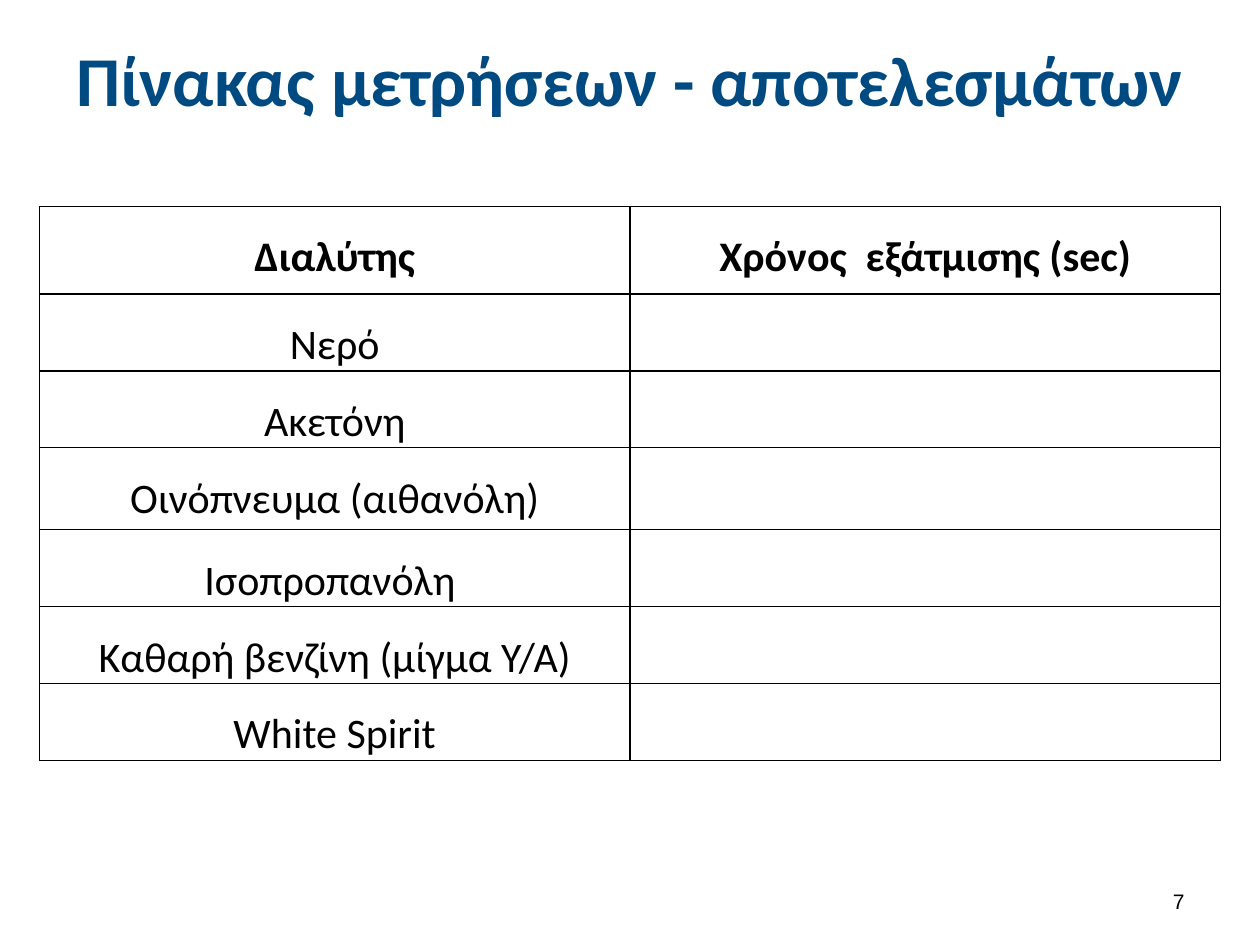
from lxml.etree import SubElement
from pptx import Presentation
from pptx.dml.color import RGBColor
from pptx.enum.text import MSO_ANCHOR, PP_ALIGN
from pptx.oxml.ns import qn
from pptx.util import Pt

# Content
TITLE = "Πίνακας μετρήσεων - αποτελεσμάτων"
PAGE_NUMBER = "7"
HEADINGS = ["Διαλύτης", "Χρόνος  εξάτμισης (sec)"]
SOLVENTS = [
    "Νερό",
    "Ακετόνη",
    "Οινόπνευμα (αιθανόλη)",
    "Ισοπροπανόλη ",
    "Καθαρή βενζίνη (μίγμα Υ/Α)",
    "White Spirit",
]
ROWS = [HEADINGS] + [[solvent, ""] for solvent in SOLVENTS]

# Measures in points
TABLE_LEFT, TABLE_TOP, COLUMN_WIDTH = 22.5, 118, 337.5
ROW_HEIGHTS = [50, 43.2, 43.2, 46.8, 43.2, 43.2, 43.2]

BLUE, BLACK = "004A82", "000000"


def color(value):
    return RGBColor.from_string(value)


def write(para, text, size, font, ink, align, bold=False):
    para.text = text
    para.alignment = align
    para.font.size = Pt(size)
    for span in para.runs:
        span.font.size = Pt(size)
        span.font.name = font
        span.font.bold = bold
        span.font.color.rgb = color(ink)


def add_borders(cell, ink, width):
    properties = cell._tc.get_or_add_tcPr()
    for position, side in enumerate(("a:lnL", "a:lnR", "a:lnT", "a:lnB")):
        line = SubElement(properties, qn(side), w=str(Pt(width)))
        fill = SubElement(line, qn("a:solidFill"))
        SubElement(fill, qn("a:srgbClr"), val=ink)
        properties.insert(position, line)


def place(box, left, top, width, height):
    box.left, box.top = Pt(left), Pt(top)
    box.width, box.height = Pt(width), Pt(height)


deck = Presentation()
deck.slide_width, deck.slide_height = Pt(720), Pt(540)
page = deck.slides.add_slide(deck.slide_layouts[5])

# Title
title = page.shapes.title
place(title, 0, 9.4, 720, 71.3)
title.text_frame.vertical_anchor = MSO_ANCHOR.MIDDLE
write(title.text_frame.paragraphs[0], TITLE, 40, "Calibri", BLUE,
      PP_ALIGN.CENTER, bold=True)

# Table of measurements
table = page.shapes.add_table(
    len(ROWS), len(HEADINGS), Pt(TABLE_LEFT), Pt(TABLE_TOP),
    Pt(COLUMN_WIDTH * len(HEADINGS)), Pt(sum(ROW_HEIGHTS))).table
table.first_row = table.horz_banding = False
for column in table.columns:
    column.width = Pt(COLUMN_WIDTH)
for row_index, texts in enumerate(ROWS):
    table.rows[row_index].height = Pt(ROW_HEIGHTS[row_index])
    for column_index, text in enumerate(texts):
        cell = table.cell(row_index, column_index)
        cell.margin_left = cell.margin_right = Pt(5)
        cell.margin_top = cell.margin_bottom = Pt(0)
        cell.fill.background()
        add_borders(cell, BLACK, 1)
        para = cell.text_frame.paragraphs[0]
        para.line_spacing = 1.5
        write(para, text, 24, "Calibri", BLACK, PP_ALIGN.CENTER,
              bold=row_index == 0)

# Page number
number = page.shapes.add_textbox(Pt(516), Pt(500.5), Pt(168), Pt(28.8))
number.text_frame.word_wrap = True
number.text_frame.vertical_anchor = MSO_ANCHOR.MIDDLE
write(number.text_frame.paragraphs[0], PAGE_NUMBER, 12, "Arial", BLACK,
      PP_ALIGN.RIGHT)

deck.save("out.pptx")
